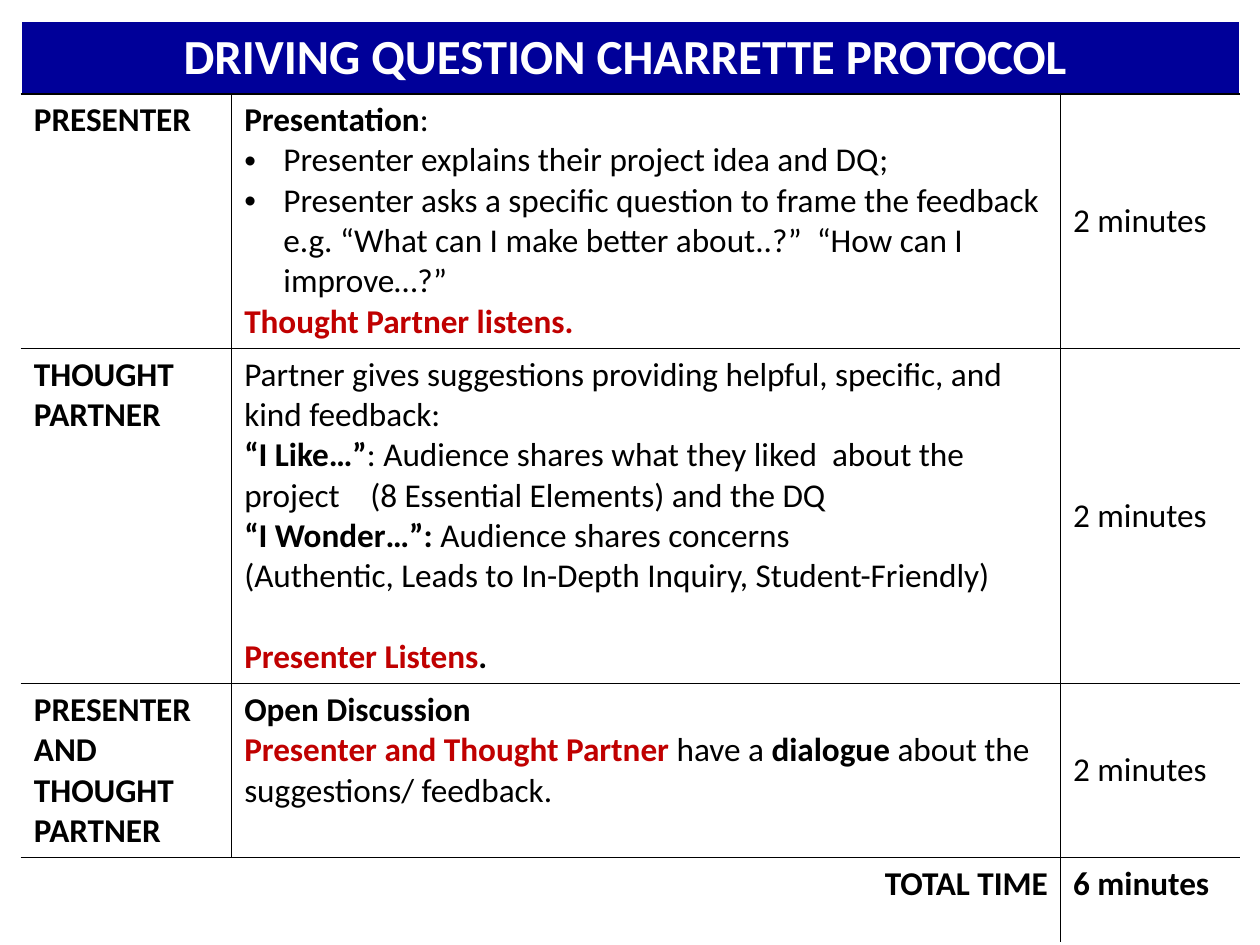
from dataclasses import dataclass
from typing import NamedTuple

from lxml.etree import SubElement
from pptx import Presentation
from pptx.dml.color import RGBColor
from pptx.enum.text import MSO_ANCHOR, PP_ALIGN
from pptx.oxml import parse_xml
from pptx.oxml.ns import nsdecls, qn
from pptx.util import Cm, Pt

COLORS = {"ink": "000000", "paper": "FFFFFF", "banner": "000099", "accent": "C00000"}
FONT = "Calibri"
COLUMN_WIDTHS = (4.24, 16.71, 3.61)
ROW_HEIGHTS = (1.45, 5.08, 6.68, 3.48, 1.7)
SIDES = {"left": "lnL", "right": "lnR", "top": "lnT", "bottom": "lnB"}
BULLET_INDENT = Cm(0.79)


class Words(NamedTuple):
    text: str
    bold: bool = False
    color: str = "ink"


@dataclass(frozen=True)
class Line:
    words: tuple[Words, ...]
    bullet: bool = False
    gap_before: float = 0
    align: PP_ALIGN = PP_ALIGN.LEFT
    size: float = 19


@dataclass(frozen=True)
class Stage:
    role: str
    steps: tuple[Line, ...]
    duration: str = "2 minutes"


STAGES = (
    Stage("PRESENTER", (
        Line((Words("Presentation", True), Words(":"))),
        Line((Words("Presenter explains their project idea and DQ;"),), bullet=True),
        Line((Words("Presenter asks a specific question to frame the feedback e.g. "
                    "“What can I make better about..?”  “How can I improve…?”"),), bullet=True),
        Line((Words("Thought Partner listens.", True, "accent"),)),
    )),
    Stage("THOUGHT PARTNER", (
        Line((Words("Partner gives suggestions providing helpful, specific, "
                    "and kind feedback:"),)),
        Line((Words("“I Like…”", True),
              Words(": Audience shares what they liked  about the project"
                    "\t(8 Essential Elements) and the DQ"))),
        Line((Words("“I Wonder…”: ", True), Words("Audience shares concerns"))),
        Line((Words("(Authentic, Leads to In-Depth Inquiry, Student-Friendly)"),)),
        Line((Words("Presenter Listens", True, "accent"), Words(".", True)), gap_before=23),
    )),
    Stage("PRESENTER AND THOUGHT PARTNER", (
        Line((Words("Open Discussion", True),)),
        Line((Words("Presenter and Thought Partner ", True, "accent"), Words("have a "),
              Words("dialogue", True), Words(" about the suggestions/ feedback."))),
    )),
)


def write_lines(cell, lines: tuple[Line, ...], anchor: MSO_ANCHOR = MSO_ANCHOR.TOP) -> None:
    cell.vertical_anchor = anchor
    frame = cell.text_frame
    for index, line in enumerate(lines):
        paragraph = frame.add_paragraph() if index else frame.paragraphs[0]
        paragraph.alignment = line.align
        if line.gap_before:
            paragraph.space_before = Pt(line.gap_before)
        if line.bullet:
            properties = paragraph._p.get_or_add_pPr()
            properties.set("marL", str(BULLET_INDENT))
            properties.set("indent", str(-BULLET_INDENT))
            SubElement(properties, qn("a:buFont"), typeface="Arial")
            SubElement(properties, qn("a:buChar"), char="•")
        for words in line.words:
            run = paragraph.add_run()
            run.text = words.text
            run.font.name = FONT
            run.font.size = Pt(line.size)
            run.font.bold = words.bold
            run.font.color.rgb = RGBColor.from_string(COLORS[words.color])


def draw_borders(cell, **sides: str) -> None:
    properties = cell._tc.get_or_add_tcPr()
    for index, (side, tag) in enumerate(SIDES.items()):
        paint = "<a:noFill/>"
        if side in sides:
            paint = f'<a:solidFill><a:srgbClr val="{COLORS[sides[side]]}"/></a:solidFill>'
        border = parse_xml(f'<a:{tag} {nsdecls("a")} w="{Pt(1)}">{paint}</a:{tag}>')
        properties.insert(index, border)


def draw_banner(cells) -> None:
    for cell in cells:
        cell.fill.solid()
        cell.fill.fore_color.rgb = RGBColor.from_string(COLORS["banner"])
        draw_borders(cell, left="paper", right="paper", top="paper", bottom="ink")
    cells[0].merge(cells[-1])
    title = Words("DRIVING QUESTION CHARRETTE PROTOCOL ", True, "paper")
    write_lines(cells[0], (Line((title,), align=PP_ALIGN.CENTER, size=28),), MSO_ANCHOR.MIDDLE)


def draw_stage(cells, stage: Stage) -> None:
    role, steps, duration = cells
    for cell in cells:
        cell.fill.background()
    write_lines(role, (Line((Words(stage.role, True),)),))
    write_lines(steps, stage.steps)
    write_lines(duration, (Line((Words(stage.duration),)),), MSO_ANCHOR.MIDDLE)
    draw_borders(role, left="paper", right="ink", top="ink", bottom="ink")
    draw_borders(steps, left="ink", right="ink", top="ink", bottom="ink")
    draw_borders(duration, left="ink", right="paper", top="ink", bottom="ink")


def draw_total(cells) -> None:
    blank, label, total = cells
    for cell in cells:
        cell.fill.background()
    write_lines(label, (Line((Words("TOTAL TIME", True),), align=PP_ALIGN.RIGHT),))
    write_lines(total, (Line((Words("6 minutes", True),)),))
    draw_borders(blank, top="ink")
    draw_borders(label, top="ink", right="ink")
    draw_borders(total, top="ink", left="ink")


def main() -> None:
    deck = Presentation()
    deck.slide_width, deck.slide_height = Cm(25.4), Cm(19.05)
    slide = deck.slides.add_slide(deck.slide_layouts[6])
    protocol = slide.shapes.add_table(
        len(ROW_HEIGHTS), len(COLUMN_WIDTHS), Cm(0.43), Cm(0.43),
        Cm(sum(COLUMN_WIDTHS)), Cm(sum(ROW_HEIGHTS)),
    ).table
    protocol.first_row = protocol.horz_banding = False
    for column, width in zip(protocol.columns, COLUMN_WIDTHS):
        column.width = Cm(width)
    for row, height in zip(protocol.rows, ROW_HEIGHTS):
        row.height = Cm(height)
    banner, *stages, total = [list(row.cells) for row in protocol.rows]
    draw_banner(banner)
    for cells, stage in zip(stages, STAGES):
        draw_stage(cells, stage)
    draw_total(total)
    deck.save("out.pptx")


if __name__ == "__main__":
    main()
